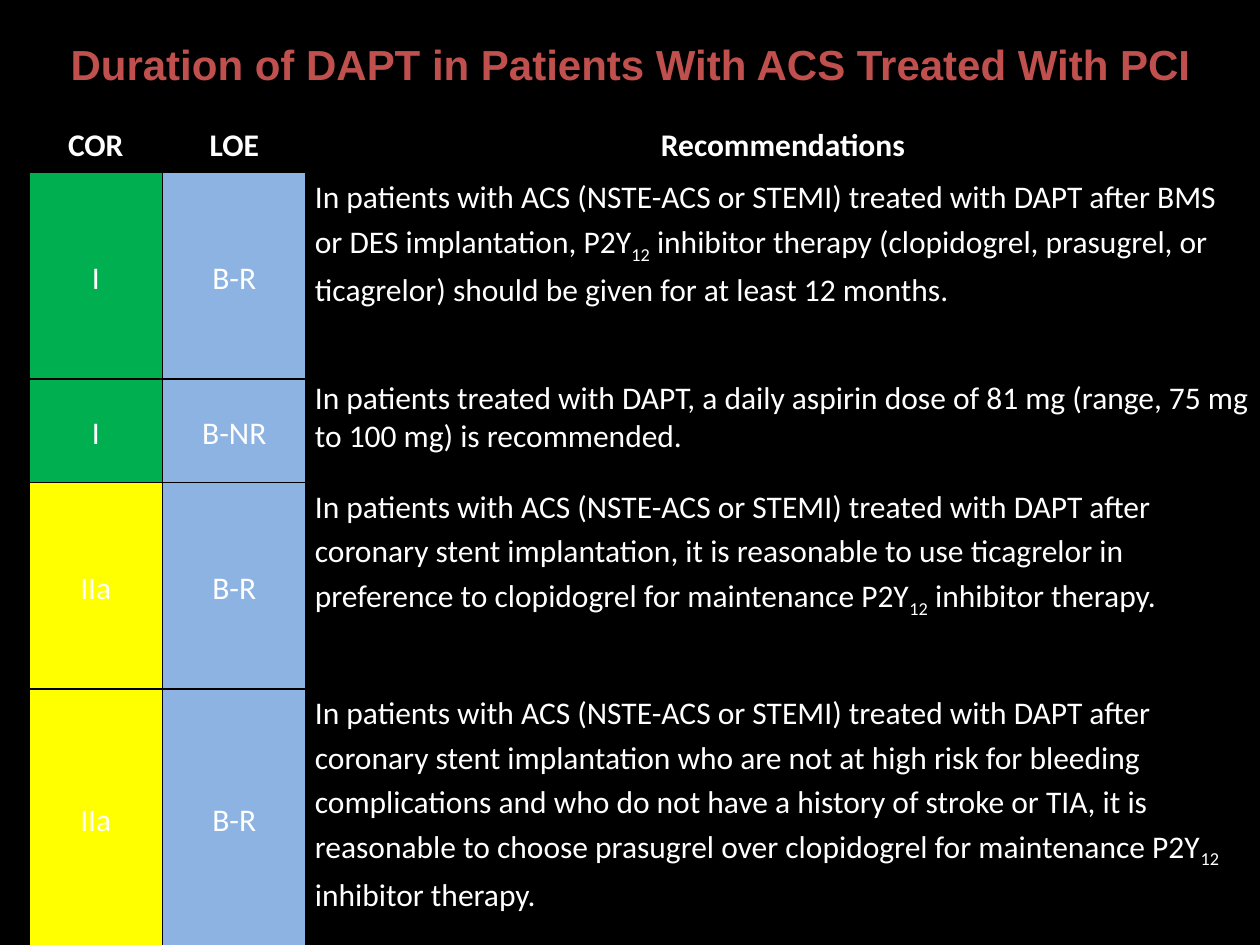
import pptx
import pptx.util
import pptx.dml.color
import pptx.enum.text
import lxml.etree
from pptx.util import Inches

ALIGN = pptx.enum.text.PP_ALIGN
ANCHOR = pptx.enum.text.MSO_ANCHOR
NS = "http://schemas.openxmlformats.org/drawingml/2006/main"


def rgb(value):
    return pptx.dml.color.RGBColor.from_string(value)


def write(tf, text, size=18, font="Calibri", color="FFFFFF", bold=False,
          align=ALIGN.LEFT, spacing=None):
    p = tf.paragraphs[0]
    p.alignment = align
    if spacing:
        p.line_spacing = spacing
    for i, part in enumerate(text.split("_")):
        r = p.add_run()
        r.text = part
        r.font.size = pptx.util.Pt(size)
        r.font.name = font
        r.font.bold = bold
        r.font.color.rgb = rgb(color)
        if i % 2:
            r._r.get_or_add_rPr().set("baseline", "-25000")


class Deck:
    background = "000000"
    accent = "C0504D"
    cor_fills = {"I": "00B050", "IIa": "FFFF00"}
    loe_fill = "8DB3E2"

    def __init__(self, width, height):
        self.prs = pptx.Presentation()
        self.prs.slide_width = Inches(width)
        self.prs.slide_height = Inches(height)
        self.s = self.prs.slides.add_slide(self.prs.slide_layouts[5])
        fill = self.s.background.fill
        fill.solid()
        fill.fore_color.rgb = rgb(self.background)

    def title(self, text, left, top, width, height):
        sp = self.s.shapes.title
        sp.left, sp.top = Inches(left), Inches(top)
        sp.width, sp.height = Inches(width), Inches(height)
        tf = sp.text_frame
        tf.word_wrap = True
        tf.vertical_anchor = ANCHOR.MIDDLE
        write(tf, text, size=24, font="Arial", color=self.accent, bold=True,
              align=ALIGN.CENTER)

    def borders(self, cell):
        tcPr = cell._tc.get_or_add_tcPr()
        for side in ("lnL", "lnR", "lnT", "lnB"):
            ln = lxml.etree.SubElement(tcPr, f"{{{NS}}}{side}", w="12700")
            solid = lxml.etree.SubElement(ln, f"{{{NS}}}solidFill")
            lxml.etree.SubElement(solid, f"{{{NS}}}srgbClr", val=self.background)

    def cell(self, cell, text, fill=None, anchor=ANCHOR.TOP, **style):
        cell.margin_left = cell.margin_right = Inches(0.07)
        cell.margin_top = cell.margin_bottom = 0
        cell.vertical_anchor = anchor
        self.borders(cell)
        if fill:
            cell.fill.solid()
            cell.fill.fore_color.rgb = rgb(fill)
        else:
            cell.fill.background()
        write(cell.text_frame, text, **style)

    def table(self, left, top, widths, heights, header, rows):
        table = self.s.shapes.add_table(
            len(heights), len(widths), Inches(left), Inches(top),
            Inches(sum(widths)), Inches(sum(heights))).table
        table.first_row = table.horz_banding = False
        for column, width in zip(table.columns, widths):
            column.width = Inches(width)
        for row, height in zip(table.rows, heights):
            row.height = Inches(height)
        for j, text in enumerate(header):
            self.cell(table.cell(0, j), text, bold=True, align=ALIGN.CENTER,
                      spacing=1.15)
        for i, (cor, loe, advice, spacing) in enumerate(rows, 1):
            grades = ((cor, self.cor_fills[cor]), (loe, self.loe_fill))
            for j, (text, fill) in enumerate(grades):
                self.cell(table.cell(i, j), text, fill, ANCHOR.MIDDLE,
                          align=ALIGN.CENTER, spacing=1.15)
            self.cell(table.cell(i, 2), advice, spacing=spacing)


HEADER = ("COR", "LOE", "Recommendations")
ROWS = (
    ("I", "B-R",
     "In patients with ACS (NSTE-ACS or STEMI) treated with DAPT after BMS or DES "
     "implantation, P2Y_12_ inhibitor therapy (clopidogrel, prasugrel, or "
     "ticagrelor) should be given for at least 12 months.", 1.15),
    ("I", "B-NR",
     "In patients treated with DAPT, a daily aspirin dose of 81 mg (range, 75 mg "
     "to 100 mg) is recommended.", None),
    ("IIa", "B-R",
     "In patients with ACS (NSTE-ACS or STEMI) treated with DAPT after coronary "
     "stent implantation, it is reasonable to use ticagrelor in preference to "
     "clopidogrel for maintenance P2Y_12_ inhibitor therapy.", 1.15),
    ("IIa", "B-R",
     "In patients with ACS (NSTE-ACS or STEMI) treated with DAPT after coronary "
     "stent implantation who are not at high risk for bleeding complications and "
     "who do not have a history of stroke or TIA, it is reasonable to choose "
     "prasugrel over clopidogrel for maintenance P2Y_12_ inhibitor therapy.", 1.15),
)


def main():
    deck = Deck(10, 7.5)
    deck.title("Duration of DAPT in Patients With ACS Treated With PCI",
               0.42, 0.17, 9.17, 0.67)
    deck.table(0.23, 0.96, (1.06, 1.14, 7.57), (0.41, 1.64, 0.82, 1.64, 2.04),
               HEADER, ROWS)
    deck.prs.save("out.pptx")


if __name__ == "__main__":
    main()
